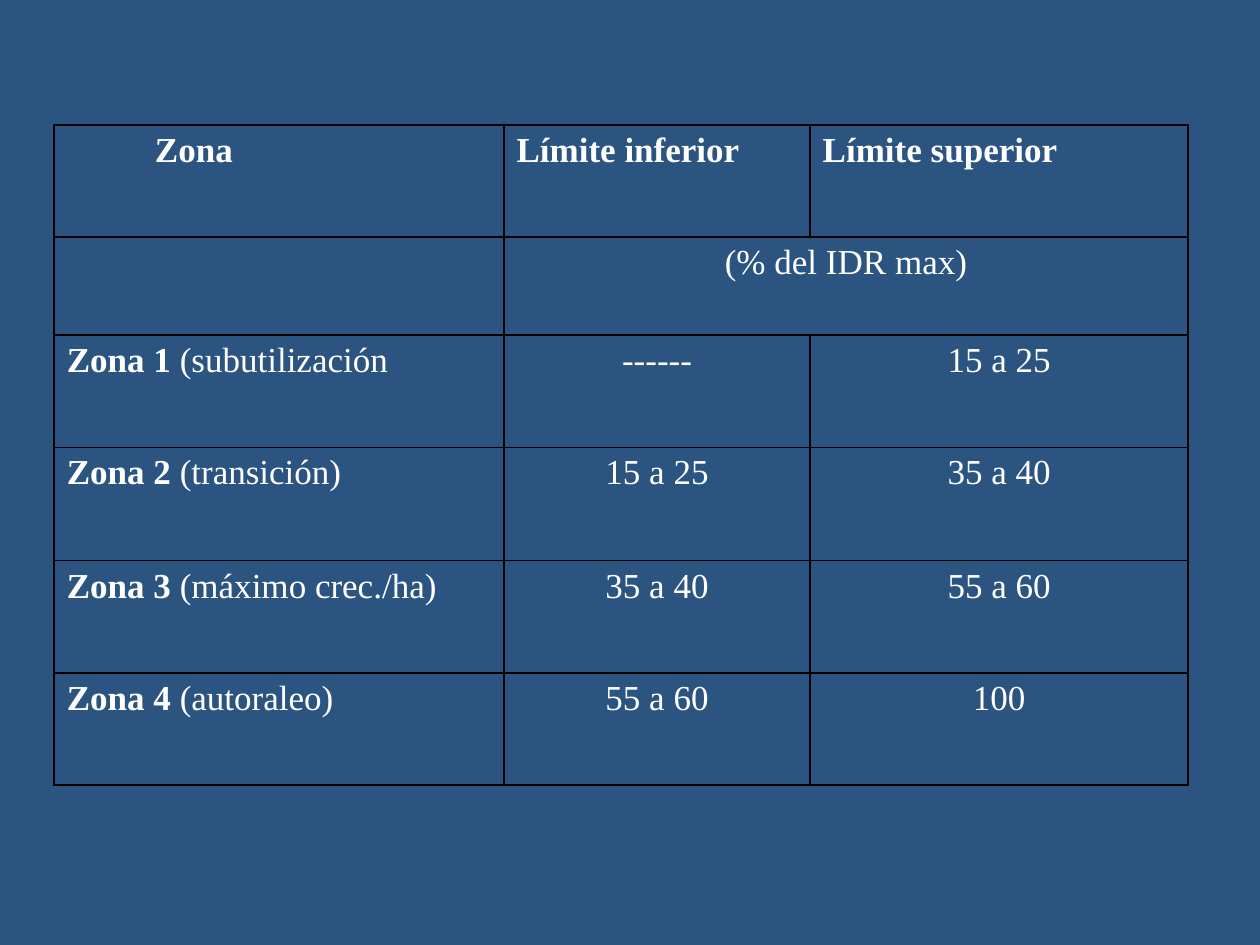
"""Build a slide with a table of stand density zones and their limits."""
from pptx import Presentation
from pptx.dml.color import RGBColor
from pptx.enum.text import PP_ALIGN as Align
from pptx.oxml import parse_xml
from pptx.oxml.ns import nsdecls
from pptx.util import Inches, Pt


def color(value):
    return RGBColor.from_string(value)


def add_borders(cell):
    properties = cell._tc.get_or_add_tcPr()
    for position, side in enumerate(("lnL", "lnR", "lnT", "lnB")):
        properties.insert(position, parse_xml(
            f'<a:{side} {nsdecls("a")} w="{Pt(1)}"><a:solidFill>'
            f'<a:srgbClr val="{LINE}"/></a:solidFill></a:{side}>'))


BACKGROUND, LINE, TEXT = "2B5481", "000000", "FFFFFF"
COLUMNS = (3.57, 2.43, 3)
ROWS = (0.89, 0.78, 0.89, 0.9, 0.89, 0.89)
FORMAT = {"name": "Times New Roman", "size": Pt(20)}
HEADINGS = ("Zona", "Límite inferior", "Límite superior")
ZONES = (
    ("Zona 1", " (subutilización", "------", "15 a 25"),
    ("Zona 2", " (transición)", "15 a 25", "35 a 40"),
    ("Zona 3", " (máximo crec./ha)", "35 a 40", "55 a 60"),
    ("Zona 4", " (autoraleo)", "55 a 60", "100"),
)

grid = [[((heading, True),) for heading in HEADINGS],
        [(), (("(% del IDR max)", False),), ()]]
for zone, description, lower, upper in ZONES:
    grid.append([((zone, True), (description, False)),
                 ((lower, False),), ((upper, False),)])

presentation = Presentation()
presentation.slide_width, presentation.slide_height = Inches(10), Inches(7.5)
slide = presentation.slides.add_slide(presentation.slide_layouts[6])
slide.background.fill.solid()
slide.background.fill.fore_color.rgb = color(BACKGROUND)

frame = slide.shapes.add_table(
    len(ROWS), len(COLUMNS), Inches(0.43), Inches(0.99),
    Inches(sum(COLUMNS)), Inches(sum(ROWS)))
table = frame.table
table.first_row = table.horz_banding = False
for column, width in zip(table.columns, COLUMNS):
    column.width = Inches(width)
for row, height in zip(table.rows, ROWS):
    row.height = Inches(height)
table.cell(1, 1).merge(table.cell(1, 2))

for row_index, contents in enumerate(grid):
    for column_index, runs in enumerate(contents):
        cell = table.cell(row_index, column_index)
        cell.fill.background()
        add_borders(cell)
        paragraph = cell.text_frame.paragraphs[0]
        centred = row_index > 0 and column_index > 0
        paragraph.alignment = Align.CENTER if centred else Align.LEFT
        for text, bold in runs:
            run = paragraph.add_run()
            run.text = text
            for attribute, value in {**FORMAT, "bold": bold}.items():
                setattr(run.font, attribute, value)
            run.font.color.rgb = color(TEXT)

table.cell(0, 0).margin_left = Inches(0.8)

presentation.save("out.pptx")
